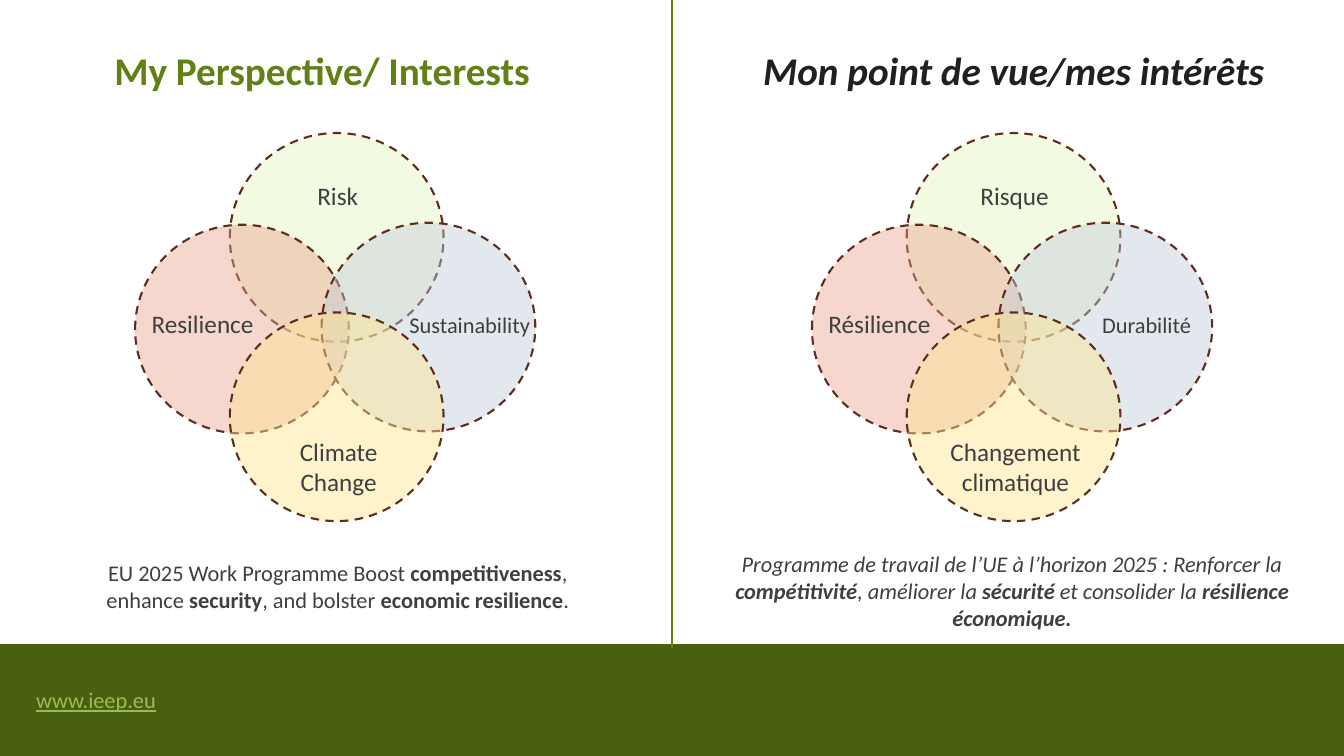
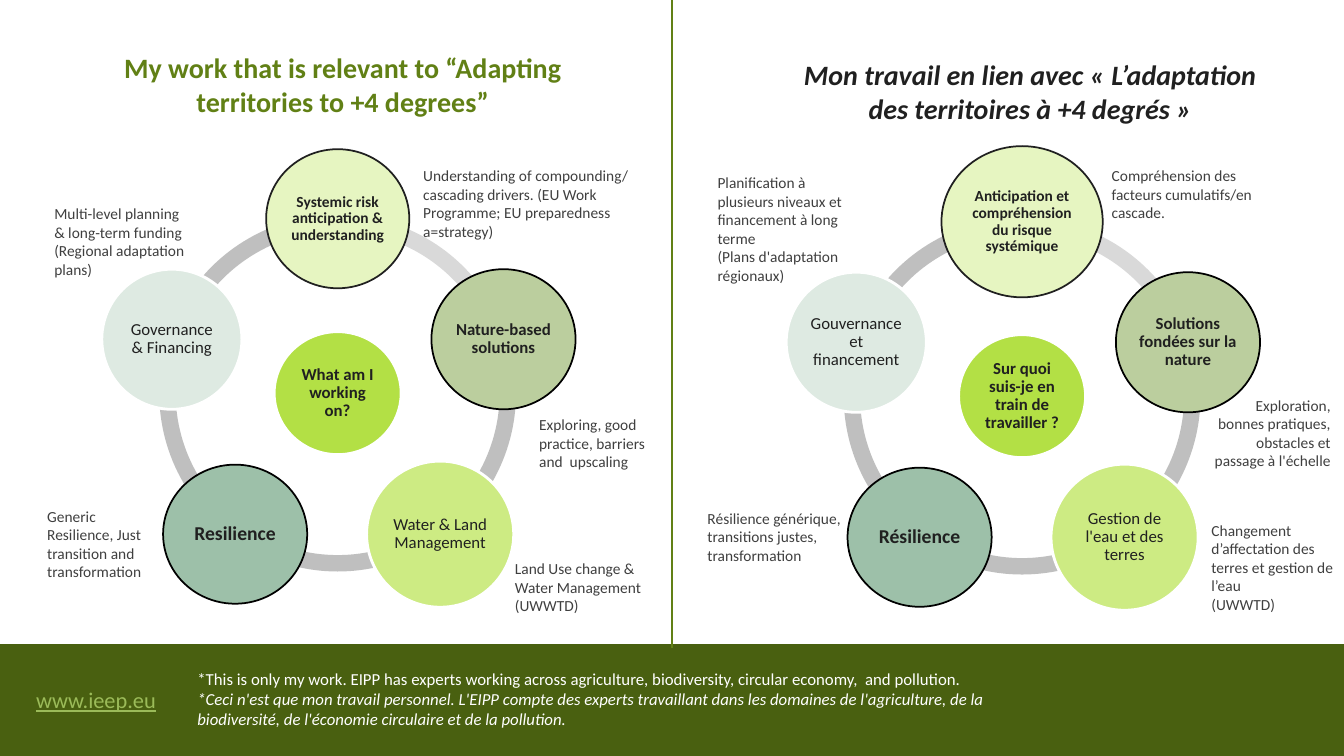
"""Build two bilingual slides on research interests and climate adaptation work."""
import math
from dataclasses import dataclass
from typing import Any, NamedTuple

import lxml.etree
import pptx
import pptx.dml.color
import pptx.enum.dml
import pptx.enum.shapes
import pptx.enum.text
import pptx.oxml.ns
import pptx.shapes.autoshape
import pptx.shapes.base
import pptx.slide
import pptx.text.text
import pptx.util

SHAPE = pptx.enum.shapes.MSO_SHAPE
ALIGN = pptx.enum.text.PP_ALIGN
ANCHOR = pptx.enum.text.MSO_ANCHOR
COLUMNS, ROWS = 133.33, 75
CELL = pptx.util.Inches(0.1)
TITLE_ONLY = 5
STEP = 72


@dataclass(frozen=True)
class Theme:
    """Colours and type sizes of the deck."""
    font: str = "Calibri"
    band: str = "496010"
    green: str = "618015"
    link: str = "9BBB59"
    white: str = "FFFFFF"
    black: str = "000000"
    ink: str = "202020"
    body: str = "3F3F3F"
    venn_line: str = "602C1D"
    ring: str = "BFBFBF"
    ring_light: str = "D9D9D9"
    hub: str = "B3E045"
    lime: str = "E6F5C1"
    heading: int = 28
    subheading: int = 20
    label: int = 18
    text: int = 16
    large: int = 14
    small: int = 12
    note: int = 11


THEME = Theme()


class Box(NamedTuple):
    """Left, top, width and height in grid cells."""
    col: float
    row: float
    cols: float
    rows: float

    def shifted(self, cols: float) -> "Box":
        """Return the box moved to the right."""
        return self._replace(col=self.col + cols)

    def emu(self) -> tuple[int, ...]:
        """Return the four lengths in EMU."""
        return tuple(round(cells * CELL) for cells in self)


class Type(NamedTuple):
    """Format of a piece of text."""
    size: int
    color: str = THEME.body
    bold: bool = False
    italic: bool = False
    underline: bool = False
    align: Any = ALIGN.LEFT


class Outline(NamedTuple):
    """Colour, width and dash of a line."""
    color: str
    width: float
    dash: Any = None


class VennCircle(NamedTuple):
    """Circle of the Venn diagram."""
    col: float
    row: float
    fill: str
    opacity: int


class VennLabel(NamedTuple):
    """Label of a circle in both languages."""
    english: str
    french: str
    box: Box
    size: int


class NodeStyle(NamedTuple):
    """Look of one node on the ring."""
    cols: float
    rows: float
    fill: str
    outline: Outline
    size: int
    bold: bool


class Ring(NamedTuple):
    """Ring of themes around a question."""
    col: float
    row: float
    question: str
    themes: tuple[str, ...]
    first_size: tuple[float, float]


class Note(NamedTuple):
    """Remark beside a node."""
    box: Box
    text: str
    align: Any = ALIGN.LEFT


DASHED = Outline(THEME.venn_line, 1.5, pptx.enum.dml.MSO_LINE.DASH)
WHITE_EDGE = Outline(THEME.white, 2)
BLACK_EDGE = Outline(THEME.black, 1.25)
VENN_SHIFT = 67.15
VENN = (
    VennCircle(22.8, 13.2, THEME.lime, 46),
    VennCircle(13.4, 22.3, "E9A38E", 43),
    VennCircle(31.9, 22.1, "C0CBDB", 43),
    VennCircle(22.8, 31, "FFE591", 46),
)
VENN_LABELS = (
    VennLabel("Risk", "Risque", Box(22.9, 17.4, 21.2, 4), THEME.label),
    VennLabel("Climate Change", "Changement climatique", Box(25.8, 42.8, 15.6, 7.1), THEME.label),
    VennLabel("Resilience", "Résilience", Box(12.3, 30.1, 15.6, 4), THEME.label),
    VennLabel("Sustainability", "Durabilité", Box(38.8, 30.4, 15.6, 3.7), THEME.text),
)
NODES = (
    NodeStyle(14.2, 13.8, THEME.lime, Outline(THEME.ink, 1.25), THEME.note, True),
    NodeStyle(14.3, 13.9, "BBCE9E", BLACK_EDGE, THEME.small, True),
    NodeStyle(14.6, 14.5, "CDEB83", WHITE_EDGE, THEME.small, False),
    NodeStyle(14.3, 13.8, "9DC0A9", BLACK_EDGE, THEME.large, True),
    NodeStyle(13.9, 13.9, "DEEAE2", WHITE_EDGE, THEME.small, False),
)
HUB = NodeStyle(12.6, 12.2, THEME.hub, WHITE_EDGE, THEME.small, True)
RING_SIZE, ORBIT, THICKNESS = 35.4, 17.3, 0.046
RINGS = (
    Ring(33.5, 39, "What am I working on?",
         ("Systemic risk anticipation & understanding", "Nature-based solutions",
          "Water & Land Management", "Resilience", "Governance & Financing"), (14.2, 13.8)),
    Ring(101.4, 39.3, "Sur quoi suis-je en train de travailler ?",
         ("Anticipation et compréhension du risque systémique", "Solutions fondées sur la nature",
          "Gestion de l'eau et des terres", "Résilience", "Gouvernance et financement"), (16, 15)),
)
NOTES = (
    Note(Box(41, 16, 23.2, 8.4), "Understanding of compounding/ cascading drivers. "
         "(EU Work Programme; EU preparedness a=strategy)"),
    Note(Box(52.5, 40.7, 14.2, 6.6), "Exploring, good practice, barriers and  upscaling"),
    Note(Box(50.1, 55, 15.7, 6.6), "Land Use change & Water Management\n(UWWTD)"),
    Note(Box(3.7, 49.8, 12.3, 8.4), "Generic Resilience, Just transition and transformation"),
    Note(Box(4.4, 19.8, 15.7, 8.4),
         "Multi-level planning & long-term funding\n(Regional adaptation plans)"),
    Note(Box(109.3, 16, 16.3, 6.6), "Compréhension des facteurs cumulatifs/en cascade."),
    Note(Box(70.2, 16.7, 16.3, 12.1), "Planification à plusieurs niveaux et financement "
         "à long terme\n(Plans d'adaptation régionaux)"),
    Note(Box(69.2, 50, 21.5, 6.6), "Résilience générique, transitions justes, transformation"),
    Note(Box(119.5, 38.8, 13.5, 8.4),
         "Exploration, bonnes pratiques, obstacles et passage à l'échelle", ALIGN.RIGHT),
    Note(Box(119.2, 51.2, 15.7, 10.3),
         "Changement d’affectation des terres et gestion de l’eau\n(UWWTD)"),
)


def rgb(color: str) -> pptx.dml.color.RGBColor:
    """Return the colour of a hex code."""
    return pptx.dml.color.RGBColor.from_string(color)


def apply(target: Any, formats: dict[str, Any]) -> None:
    """Set each format value on the target."""
    for name, value in formats.items():
        setattr(target, name, value)


def write(frame: pptx.text.text.TextFrame, text: str, kind: Type,
          margins: tuple[float, float] = (1, 0.5), anchor: Any = ANCHOR.TOP,
          spacing: float = 1.0) -> None:
    """Write one paragraph per line, with bold parts between bars."""
    side, edge = (round(cells * CELL) for cells in margins)
    apply(frame, {"word_wrap": True, "auto_size": pptx.enum.text.MSO_AUTO_SIZE.NONE,
                  "vertical_anchor": anchor, "margin_left": side, "margin_right": side,
                  "margin_top": edge, "margin_bottom": edge})
    for index, line in enumerate(text.split("\n")):
        paragraph = frame.add_paragraph() if index else frame.paragraphs[0]
        apply(paragraph, {"alignment": kind.align, "line_spacing": spacing})
        for part, words in enumerate(line.split("|")):
            if not words:
                continue
            run = paragraph.add_run()
            run.text = words
            apply(run.font, {"name": THEME.font, "size": pptx.util.Pt(kind.size),
                             "bold": kind.bold or part % 2 == 1, "italic": kind.italic,
                             "underline": kind.underline})
            run.font.color.rgb = rgb(kind.color)


def add_text(slide: pptx.slide.Slide, box: Box, text: str, kind: Type,
             **layout: Any) -> pptx.shapes.autoshape.Shape:
    """Add a text box."""
    words = slide.shapes.add_textbox(*box.emu())
    write(words.text_frame, text, kind, **layout)
    return words


def add_figure(slide: pptx.slide.Slide, preset: Any, box: Box, fill: str,
               outline: Outline | None = None, opacity: int = 100) -> pptx.shapes.autoshape.Shape:
    """Add a filled preset shape."""
    figure = slide.shapes.add_shape(preset, *box.emu())
    figure.shadow.inherit = False
    figure.fill.solid()
    figure.fill.fore_color.rgb = rgb(fill)
    if opacity < 100:
        color = figure.element.spPr.xpath("a:solidFill/a:srgbClr")[0]
        lxml.etree.SubElement(color, pptx.oxml.ns.qn("a:alpha"), val=str(opacity * 1000))
    if outline is None:
        figure.line.fill.background()
    else:
        figure.line.color.rgb = rgb(outline.color)
        apply(figure.line, {"width": pptx.util.Pt(outline.width), "dash_style": outline.dash})
    return figure


def add_headings(slide: pptx.slide.Slide, english: str, english_box: Box,
                 french: str, french_box: Box, size: int) -> None:
    """Fill the title, add its translation and the divider between them."""
    title = slide.shapes.title
    apply(title, dict(zip(("left", "top", "width", "height"), english_box.emu())))
    kind = Type(size, THEME.green, bold=True, align=ALIGN.CENTER)
    write(title.text_frame, english, kind, margins=(0, 0.1))
    add_text(slide, french_box, french, kind._replace(color=THEME.ink, italic=True),
             margins=(0, 0.1))
    middle, _, _, bottom = Box(COLUMNS / 2, 0, 0, 64.3).emu()
    divider = slide.shapes.add_connector(pptx.enum.shapes.MSO_CONNECTOR.STRAIGHT,
                                         middle, 0, middle, bottom)
    divider.line.color.rgb = rgb(THEME.green)
    divider.line.width = pptx.util.Pt(1.75)
    lxml.etree.SubElement(divider.element.spPr, pptx.oxml.ns.qn("a:effectLst"))


def move_footer_to_layout(slide: pptx.slide.Slide) -> None:
    """Draw the footer band and address, and hand them to the layout."""
    band = add_figure(slide, SHAPE.RECTANGLE, Box(0, 63.9, COLUMNS, 11.1), THEME.band)
    address = add_text(slide, Box(2.6, 67.6, 19, 6.4), "www.ieep.eu",
                       Type(THEME.text, THEME.link, underline=True))
    for number, part in enumerate((band, address), start=20):
        part.element.xpath(".//p:cNvPr")[0].set("id", str(number))
        slide.slide_layout.shapes.element.append(part.element)


def add_venn(slide: pptx.slide.Slide, language: str, shift: float) -> None:
    """Draw the four overlapping circles and their labels."""
    for circle in VENN:
        box = Box(circle.col, circle.row, 21.2, 20.7).shifted(shift)
        add_figure(slide, SHAPE.OVAL, box, circle.fill, DASHED, circle.opacity)
    for label in VENN_LABELS:
        add_text(slide, label.box.shifted(shift), getattr(label, language),
                 Type(label.size, align=ALIGN.CENTER))


def add_node(slide: pptx.slide.Slide, col: float, row: float, text: str, style: NodeStyle) -> None:
    """Draw a node around its centre."""
    box = Box(col - style.cols / 2, row - style.rows / 2, style.cols, style.rows)
    node = add_figure(slide, SHAPE.OVAL, box, style.fill, style.outline)
    write(node.text_frame, text, Type(style.size, THEME.ink, style.bold, align=ALIGN.CENTER),
          margins=(0.2, 0.2), anchor=ANCHOR.MIDDLE, spacing=0.9)


def add_ring(slide: pptx.slide.Slide, ring: Ring) -> None:
    """Draw the arcs, the question and the nodes around it."""
    box = Box(ring.col - RING_SIZE / 2, ring.row - RING_SIZE / 2, RING_SIZE, RING_SIZE)
    for start in ((198 - STEP * index) % 360 for index in range(len(NODES))):
        arc = add_figure(slide, SHAPE.BLOCK_ARC, box,
                         THEME.ring_light if start == 270 else THEME.ring)
        for index, value in enumerate((start * 0.6, (start + STEP) % 360 * 0.6, THICKNESS)):
            arc.adjustments[index] = value
    add_node(slide, ring.col, ring.row, ring.question, HUB)
    cols, rows = ring.first_size
    styles = (NODES[0]._replace(cols=cols, rows=rows), *NODES[1:])
    for index, (text, style) in enumerate(zip(ring.themes, styles)):
        angle = math.radians(270 + STEP * index)
        add_node(slide, ring.col + ORBIT * math.cos(angle),
                 ring.row + ORBIT * math.sin(angle), text, style)


def build_interests(slide: pptx.slide.Slide) -> None:
    """Fill the slide on interests."""
    add_headings(slide, "My Perspective/ Interests", Box(5.2, 4.5, 53.5, 4.9),
                 "Mon point de vue/mes intérêts", Box(74.5, 4.5, 52.1, 4.9), THEME.heading)
    add_venn(slide, "english", 0)
    add_venn(slide, "french", VENN_SHIFT)
    summary = Type(THEME.text, align=ALIGN.CENTER)
    add_text(slide, Box(7.4, 55, 52.2, 6.4), "EU 2025 Work Programme Boost |competitiveness|, "
             "enhance |security|, and bolster |economic resilience|.", summary)
    add_text(slide, Box(69.8, 54.1, 61.2, 9.1),
             "Programme de travail de l’UE à l’horizon 2025 : Renforcer la |compétitivité|, "
             "améliorer la |sécurité |et consolider la |résilience économique.|",
             summary._replace(italic=True))


def build_work(slide: pptx.slide.Slide) -> None:
    """Fill the slide on adaptation work."""
    add_headings(slide, "My work that is relevant to “Adapting territories to +4 degrees”",
                 Box(8.8, 4.9, 50.4, 6.9),
                 "Mon travail en lien avec « L’adaptation des territoires à +4 degrés »",
                 Box(78.5, 5.6, 47.4, 6.9), THEME.subheading)
    for ring in RINGS:
        add_ring(slide, ring)
    for note in NOTES:
        add_text(slide, note.box, note.text, Type(THEME.note, align=note.align))
    footnote = add_text(
        slide, Box(18.6, 65.8, 87.4, 7.1),
        "*This is only my work. EIPP has experts working across agriculture, biodiversity, "
        "circular economy,  and pollution.\n*Ceci n'est que mon travail personnel. L'EIPP compte "
        "des experts travaillant dans les domaines de l'agriculture, de la biodiversité, "
        "de l'économie circulaire et de la pollution.", Type(THEME.small, THEME.white))
    footnote.text_frame.paragraphs[1].runs[0].font.italic = True


def main() -> None:
    """Build and save the deck."""
    deck = pptx.Presentation()
    _, _, deck.slide_width, deck.slide_height = Box(0, 0, COLUMNS, ROWS).emu()
    layout = deck.slide_layouts[TITLE_ONLY]
    interests, work = (deck.slides.add_slide(layout) for _ in range(2))
    move_footer_to_layout(interests)
    build_interests(interests)
    build_work(work)
    deck.save("out.pptx")


if __name__ == "__main__":
    main()
